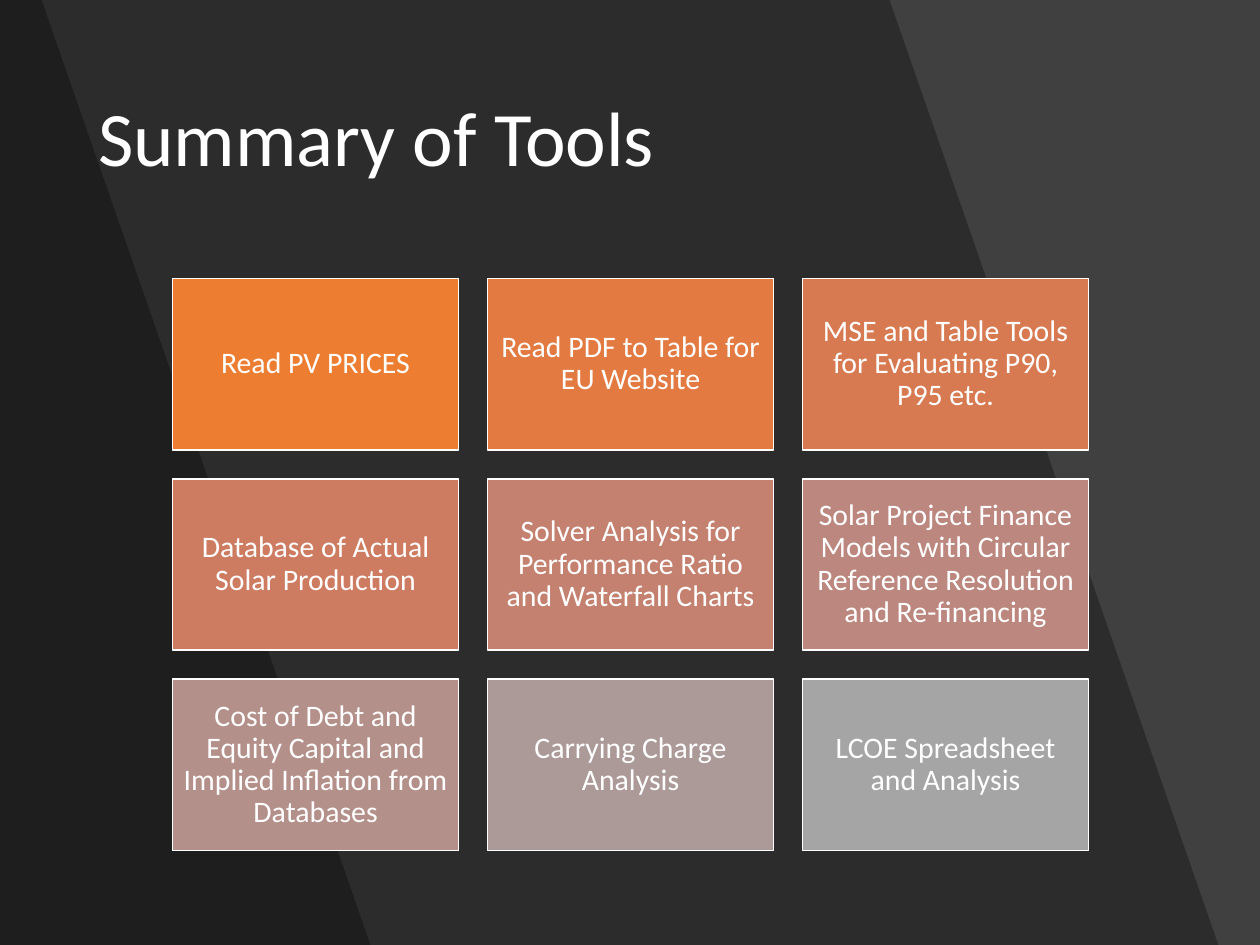
"""Build the Summary of Tools slide with a three by three grid of tiles."""
from dataclasses import dataclass

import lxml.etree
import pptx
import pptx.dml.color
import pptx.enum.shapes
import pptx.enum.text
import pptx.oxml.ns
import pptx.util

Inches = pptx.util.Inches
Pt = pptx.util.Pt
Align = pptx.enum.text.PP_ALIGN

COLORS = {"background": "404040", "band": "000000", "text": "FFFFFF", "outline": "FFFFFF"}
FONT = "Calibri"
SLIDE_W, SLIDE_H = 10, 7.5
BAND_SLANT = 2.61
BAND_TOPS = (7.06, 0.33)
BAND_OPACITY = 30
COLUMNS = 3
GRID_LEFT, GRID_TOP = 1.37, 2.21
TILE_W, TILE_H = 2.27, 1.36
GAP = 0.23


@dataclass
class Tile:
    label: str
    fill: str


TILES = [
    Tile("Read PV PRICES", "ED7D31"),
    Tile("Read PDF to Table for EU Website", "E27A42"),
    Tile("MSE and Table Tools for Evaluating P90, P95 etc.", "D87A51"),
    Tile("Database of Actual Solar Production", "CE7C61"),
    Tile("Solver Analysis for Performance Ratio and Waterfall Charts", "C48170"),
    Tile("Solar Project Finance Models with Circular Reference Resolution and Re-financing", "BC877E"),
    Tile("Cost of Debt and Equity Capital and Implied Inflation from Databases", "B4908B"),
    Tile("Carrying Charge Analysis", "AC9A99"),
    Tile("LCOE Spreadsheet and Analysis", "A5A5A5"),
]


def rgb(value: str) -> pptx.dml.color.RGBColor:
    return pptx.dml.color.RGBColor.from_string(value)


def set_fill(fill, color: str) -> None:
    fill.solid()
    fill.fore_color.rgb = rgb(color)


def write_text(sp, text: str, size: float, align: Align, inset_x: float, inset_y: float) -> None:
    tf = sp.text_frame
    frame_format = {
        "word_wrap": True,
        "vertical_anchor": pptx.enum.text.MSO_ANCHOR.MIDDLE,
        "margin_left": Inches(inset_x),
        "margin_right": Inches(inset_x),
        "margin_top": Inches(inset_y),
        "margin_bottom": Inches(inset_y),
    }
    for name, value in frame_format.items():
        setattr(tf, name, value)
    p = tf.paragraphs[0]
    p.alignment = align
    p.line_spacing = 0.9
    r = p.add_run()
    r.text = text
    for name, value in {"name": FONT, "size": Pt(size)}.items():
        setattr(r.font, name, value)
    r.font.color.rgb = rgb(COLORS["text"])


def add_band(s, top_x: float) -> None:
    builder = s.shapes.build_freeform(0, 0)
    corners = [(top_x, 0), (top_x + BAND_SLANT, SLIDE_H), (0, SLIDE_H)]
    builder.add_line_segments([(Inches(x), Inches(y)) for x, y in corners], close=True)
    sp = builder.convert_to_shape()
    sp.shadow.inherit = False
    sp.line.fill.background()
    set_fill(sp.fill, COLORS["band"])
    qn = pptx.oxml.ns.qn
    color = sp.fill._xPr.find(qn("a:solidFill")).find(qn("a:srgbClr"))
    lxml.etree.SubElement(color, qn("a:alpha")).set("val", str(BAND_OPACITY * 1000))


def add_tile(s, index: int, tile: Tile) -> None:
    row, column = divmod(index, COLUMNS)
    sp = s.shapes.add_shape(
        pptx.enum.shapes.MSO_SHAPE.RECTANGLE,
        Inches(GRID_LEFT + column * (TILE_W + GAP)),
        Inches(GRID_TOP + row * (TILE_H + GAP)),
        Inches(TILE_W),
        Inches(TILE_H),
    )
    sp.shadow.inherit = False
    set_fill(sp.fill, tile.fill)
    set_fill(sp.line.fill, COLORS["outline"])
    sp.line.width = Pt(1)
    write_text(sp, tile.label, 17, Align.CENTER, 0.07, 0.07)


def main() -> None:
    prs = pptx.Presentation()
    prs.slide_width, prs.slide_height = Inches(SLIDE_W), Inches(SLIDE_H)
    s = prs.slides.add_slide(prs.slide_layouts[6])
    set_fill(s.background.fill, COLORS["background"])
    for top_x in BAND_TOPS:
        add_band(s, top_x)
    for index, tile in enumerate(TILES):
        add_tile(s, index, tile)
    title = s.shapes.add_textbox(Inches(0.68), Inches(0.4), Inches(8.63), Inches(1.45))
    write_text(title, "Summary of Tools", 44, Align.LEFT, 0.1, 0.05)
    prs.save("out.pptx")


if __name__ == "__main__":
    main()
